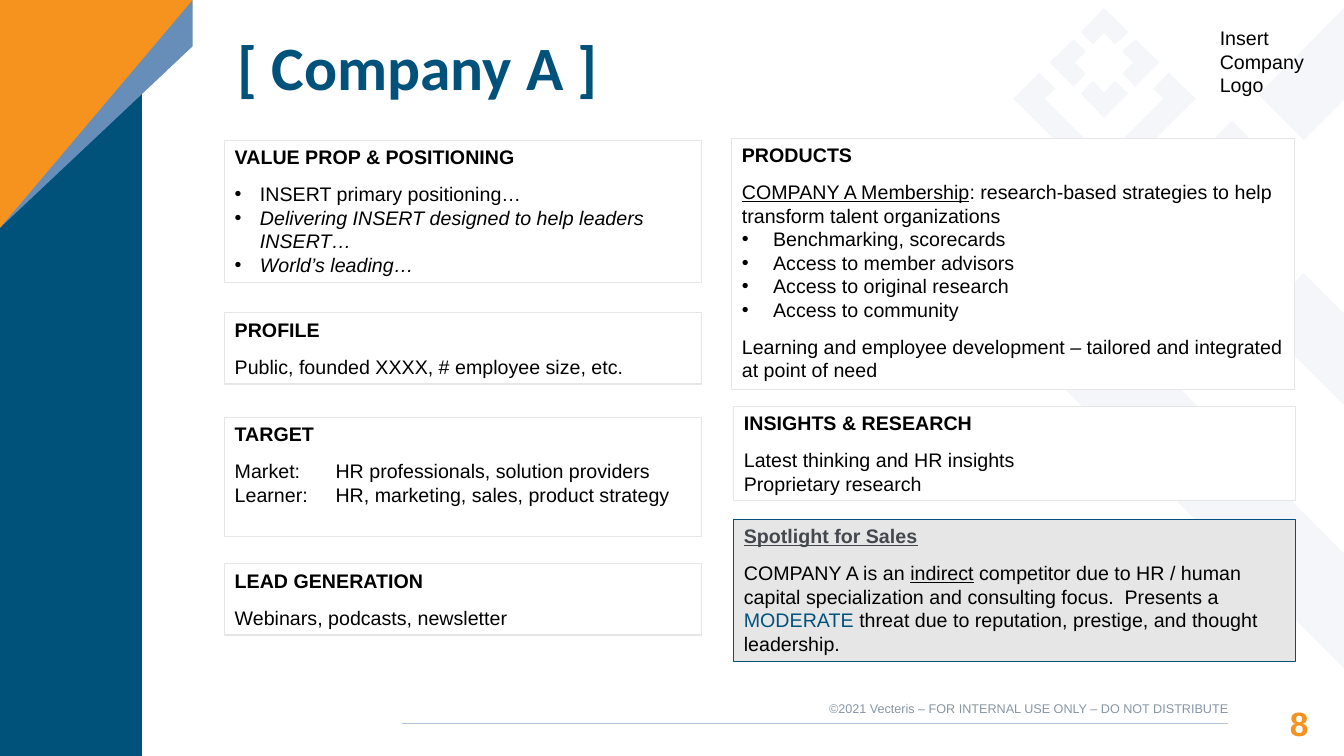
from lxml import etree
from pptx import Presentation
from pptx.dml.color import RGBColor
from pptx.enum.shapes import MSO_CONNECTOR, MSO_SHAPE
from pptx.enum.text import MSO_ANCHOR, MSO_AUTO_SIZE, PP_ALIGN
from pptx.oxml.ns import qn
from pptx.util import Inches, Pt

RECT = MSO_SHAPE.RECTANGLE
STRAIGHT = MSO_CONNECTOR.STRAIGHT
TOP, MIDDLE = MSO_ANCHOR.TOP, MSO_ANCHOR.MIDDLE
NO_FIT = MSO_AUTO_SIZE.NONE
LEFT, RIGHT = PP_ALIGN.LEFT, PP_ALIGN.RIGHT

COLORS = {
    "navy": "00527B", "blue": "668EB8", "orange": "F6921E", "pattern": "E9EEF4",
    "rule": "B3C6DC", "footer": "8796A4", "black": "000000", "white": "FFFFFF",
    "border": "E7E6E6", "spot": "00527C", "slate": "44484E",
}

PATTERN = [
    [(12.22, 1.2), (11.36, 2.05), (12.22, 2.91), (12.67, 2.45), (12.27, 2.05), (12.67, 1.65)],
    [(11, 2.4), (10.05, 3.35), (13.33, 6.63), (13.33, 5.49), (11.2, 3.35), (11.57, 2.97)],
    [(12.93, 2.71), (12.48, 3.17), (13.33, 4.02), (13.33, 3.11)],
    [(13.33, 0.08), (12.48, 0.94), (12.93, 1.39), (13.33, 0.99)],
    [(11.26, 0.39), (11.13, 0.51), (11.24, 0.62), (11.13, 0.73), (11.26, 0.86), (11.5, 0.62)],
    [(10.65, 0.39), (10.41, 0.62), (10.65, 0.86), (10.77, 0.73), (10.66, 0.62), (10.77, 0.51)],
    [(10.95, 0.08), (10.72, 0.32), (10.84, 0.44), (10.95, 0.33), (11.06, 0.44), (11.19, 0.32)],
    [(10.84, 0.8), (10.72, 0.93), (10.95, 1.17), (11.19, 0.93), (11.06, 0.8), (10.95, 0.92)],
    [(10.31, 0.72), (10.05, 0.98), (10.95, 1.88), (11.86, 0.98), (11.59, 0.72),
     (11.44, 0.88), (11.54, 0.98), (10.95, 1.57), (10.36, 0.98), (10.47, 0.88)],
]
BANDS = [
    ("navy", [(0, 0), (1.41, 0), (1.41, 7.5), (0, 7.5)]),
    ("blue", [(0, 0), (1.91, 0), (1.91, 0.46), (0, 2.26)]),
    ("orange", [(0, 0), (1.91, 0), (0, 2.26)]),
]

BODY = {"size": 14}
HEAD = {"size": 14, "bold": True}
ITALIC = {"size": 14, "italic": True}
UNDER = {"size": 14, "underline": True}
GAP = {"space_before": Pt(9.6)}

LEFT_CARDS = [
    (1.39, 1.41, "VALUE PROP & POSITIONING", [
        ([("INSERT primary positioning…", BODY)], 0.25, GAP),
        ([("Delivering INSERT designed to help leaders INSERT…", ITALIC)], 0.25, {}),
        ([("World’s leading…", ITALIC)], 0.25, {})]),
    (3.1, 0.71, "PROFILE", [
        ([("Public, founded XXXX, # employee size, etc.", BODY)], 0, GAP)]),
    (4.14, 1.18, "TARGET", [
        ([("Market: \tHR professionals, solution providers", BODY)], 0, GAP),
        ([("Learner: \tHR, marketing, sales, product strategy", BODY)], 0, {})]),
    (5.59, 0.71, "LEAD GENERATION", [
        ([("Webinars, podcasts, newsletter", BODY)], 0, GAP)]),
]
PRODUCTS = [
    ([("COMPANY A Membership", UNDER),
      (": research-based strategies to help transform talent organizations", BODY)], 0, GAP),
    *[([(t, BODY)], 0.31, {}) for t in (
        "Benchmarking, scorecards", "Access to member advisors",
        "Access to original research", "Access to community")],
    ([("Learning and employee development – tailored and integrated at point of need",
       BODY)], 0, GAP),
]
INSIGHTS = [
    ([("Latest thinking and HR insights", BODY)], 0, GAP),
    ([("Proprietary research", BODY)], 0, {}),
]
SPOTLIGHT = [
    ([("COMPANY A is an ", BODY), ("indirect", UNDER),
      (" competitor due to HR / human capital specialization and consulting focus.  Presents a ", BODY),
      ("MODERATE", {**BODY, "color": "spot"}),
      (" threat due to reputation, prestige, and thought leadership.", BODY)], 0, GAP),
]


def rgb(name):
    return RGBColor.from_string(COLORS[name])


def set_attrs(obj, values):
    for name, value in values.items():
        setattr(obj, name, value)


def add_run(p, text, fmt):
    r = p.add_run()
    r.text = text
    values = {"name": "Arial", "color": "black", **fmt}
    r.font.color.rgb = rgb(values.pop("color"))
    values["size"] = Pt(values["size"])
    set_attrs(r.font, values)


def set_indent(p, indent):
    pPr = p._p.get_or_add_pPr()
    if indent:
        pPr.set("marL", str(Inches(indent)))
        pPr.set("indent", str(-Inches(indent)))
        clr = etree.SubElement(pPr, qn("a:buClr"))
        etree.SubElement(clr, qn("a:srgbClr"), val=COLORS["black"])
        etree.SubElement(pPr, qn("a:buFont"), typeface="Arial")
        etree.SubElement(pPr, qn("a:buChar"), char="•")
    else:
        tabs = etree.SubElement(pPr, qn("a:tabLst"))
        etree.SubElement(tabs, qn("a:tab"), pos=str(Inches(1)), algn="l")


def fill_text(tf, paragraphs, margins=(0.1, 0.05, 0.1, 0.05), anchor=TOP):
    sides = ("margin_left", "margin_top", "margin_right", "margin_bottom")
    set_attrs(tf, {"word_wrap": True, "auto_size": NO_FIT, "vertical_anchor": anchor,
                   **{side: Inches(m) for side, m in zip(sides, margins)}})
    for i, (runs, indent, fmt) in enumerate(paragraphs):
        p = tf.add_paragraph() if i else tf.paragraphs[0]
        set_indent(p, indent)
        set_attrs(p, {"alignment": LEFT, **fmt})
        for text, run_fmt in runs:
            add_run(p, text, run_fmt)


def add_polygon(s, points, color, alpha=None):
    pts = [(Inches(x), Inches(y)) for x, y in points]
    builder = s.shapes.build_freeform(*pts[0])
    builder.add_line_segments(pts[1:], close=True)
    sp = builder.convert_to_shape()
    sp.shadow.inherit = False
    sp.fill.solid()
    sp.fill.fore_color.rgb = rgb(color)
    sp.line.fill.background()
    if alpha:
        clr = sp.fill._xPr.find(qn("a:solidFill"))[0]
        etree.SubElement(clr, qn("a:alpha"), val=str(alpha * 1000))


def add_background(s):
    for points in PATTERN:
        add_polygon(s, points, "pattern", 49)
    for color, points in BANDS:
        add_polygon(s, points, color)


def add_label(s, box, paragraphs, **kwargs):
    sp = s.shapes.add_textbox(*map(Inches, box))
    fill_text(sp.text_frame, paragraphs, **kwargs)


def add_footer(s, x, y, w, h):
    rule = s.shapes.add_connector(
        STRAIGHT, Inches(x), Inches(y + 0.28), Inches(x + w - 0.8), Inches(y + 0.28))
    rule.line.color.rgb = rgb("rule")
    rule.line.width = Pt(0.82)
    etree.SubElement(rule._element.spPr, qn("a:effectLst"))
    number = {"size": 24, "color": "orange", "bold": True}
    notice = {"size": 9, "color": "footer"}
    flush = (0, 0, 0, 0)
    add_label(s, (x + w - 0.8, y, 0.8, h),
              [([("8", number)], 0, {"alignment": RIGHT, "line_spacing": 1.19})], margins=flush)
    add_label(s, (x + w - 5.06, y + 0.05, 4.26, 0.15),
              [([("©2021 Vecteris – FOR INTERNAL USE ONLY – DO NOT DISTRIBUTE", notice)],
                0, {"alignment": RIGHT})], margins=flush)


def add_card(s, box, heading, paragraphs, fill="white", line="border", head=HEAD):
    sp = s.shapes.add_shape(RECT, *map(Inches, box))
    sp.shadow.inherit = False
    sp.fill.solid()
    sp.fill.fore_color.rgb = rgb(fill)
    sp.line.color.rgb = rgb(line)
    sp.line.width = Pt(0.75)
    fill_text(sp.text_frame, [([(heading, head)], 0, {}), *paragraphs])


def add_title(s, x, y, w, h):
    title = s.shapes.title
    set_attrs(title, {"left": Inches(x), "top": Inches(y),
                      "width": Inches(w), "height": Inches(h)})
    fmt = {"size": 44, "name": "Calibri", "color": "navy", "bold": True}
    fill_text(title.text_frame, [([("[ Company A ]", fmt)], 0, {"line_spacing": 0.9})],
              margins=(0, 0.01, 0, 0), anchor=MIDDLE)


def main():
    prs = Presentation()
    prs.slide_width, prs.slide_height = Inches(13.33), Inches(7.5)
    s = prs.slides.add_slide(prs.slide_layouts[5])
    add_background(s)
    add_title(s, 2.36, 0.35, 9.58, 0.68)
    add_footer(s, 3.99, 6.9, 8.99, 0.38)
    add_label(s, (12, 0.21, 1.13, 0.81),
              [([(t, BODY)], 0, {}) for t in ("Insert", "Company Logo")])
    for top, height, heading, paragraphs in LEFT_CARDS:
        add_card(s, (2.23, top, 4.73, height), heading, paragraphs)
    add_card(s, (7.26, 1.37, 5.58, 2.49), "PRODUCTS", PRODUCTS)
    add_card(s, (7.28, 4.03, 5.57, 0.94), "INSIGHTS & RESEARCH", INSIGHTS)
    add_card(s, (7.28, 5.15, 5.57, 1.41), "Spotlight for Sales", SPOTLIGHT,
             fill="border", line="spot", head={**HEAD, "color": "slate", "underline": True})
    prs.save("out.pptx")


if __name__ == "__main__":
    main()
